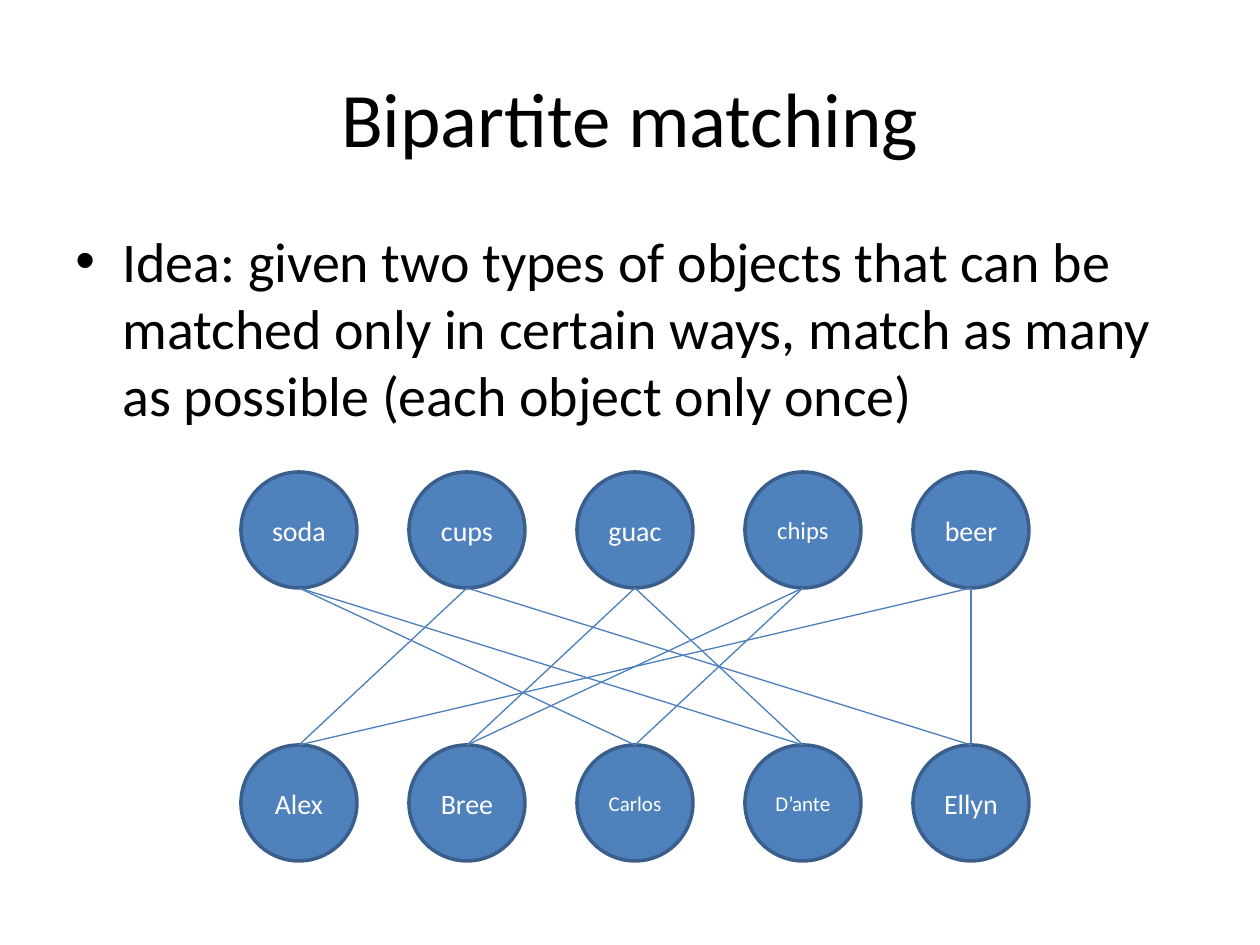
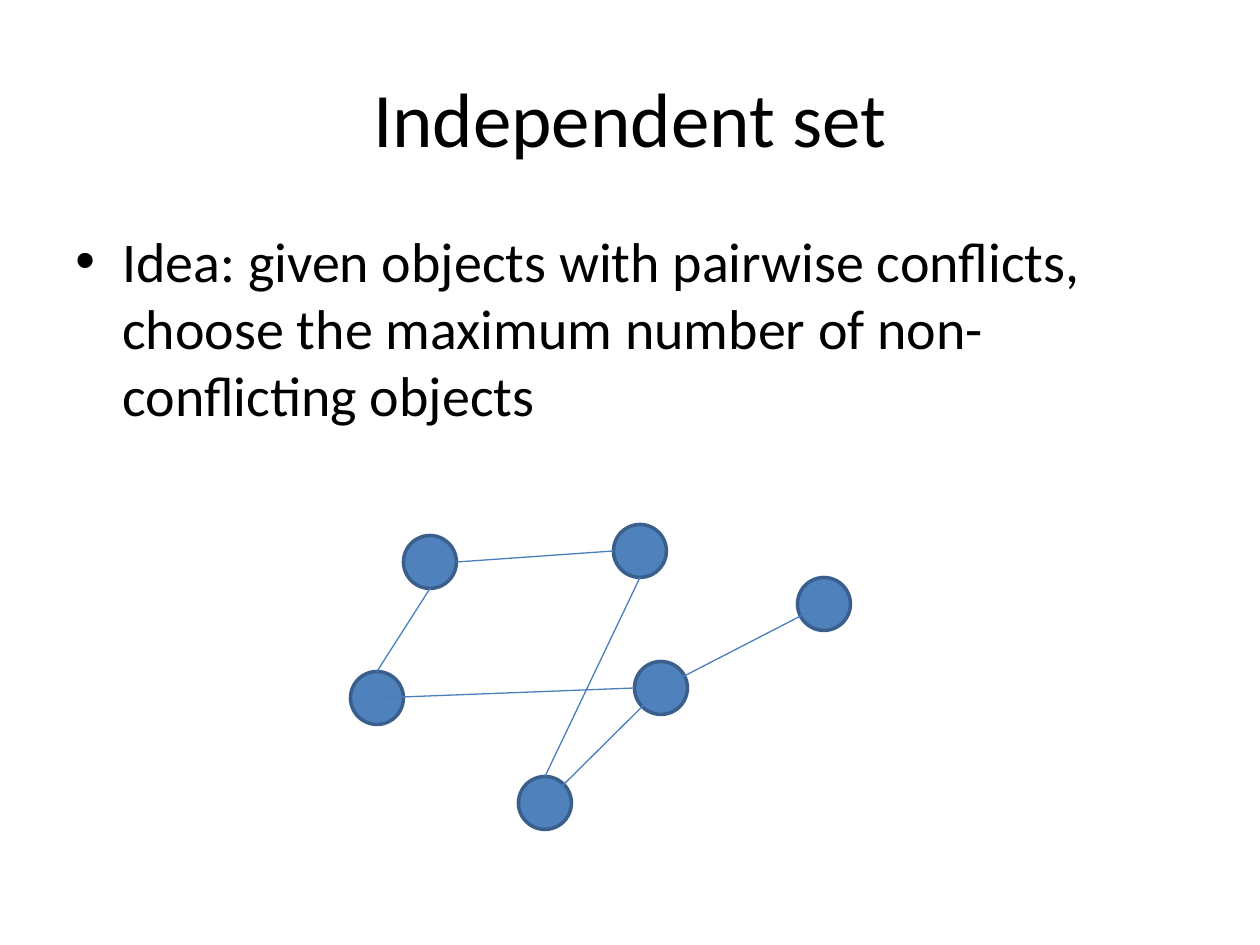
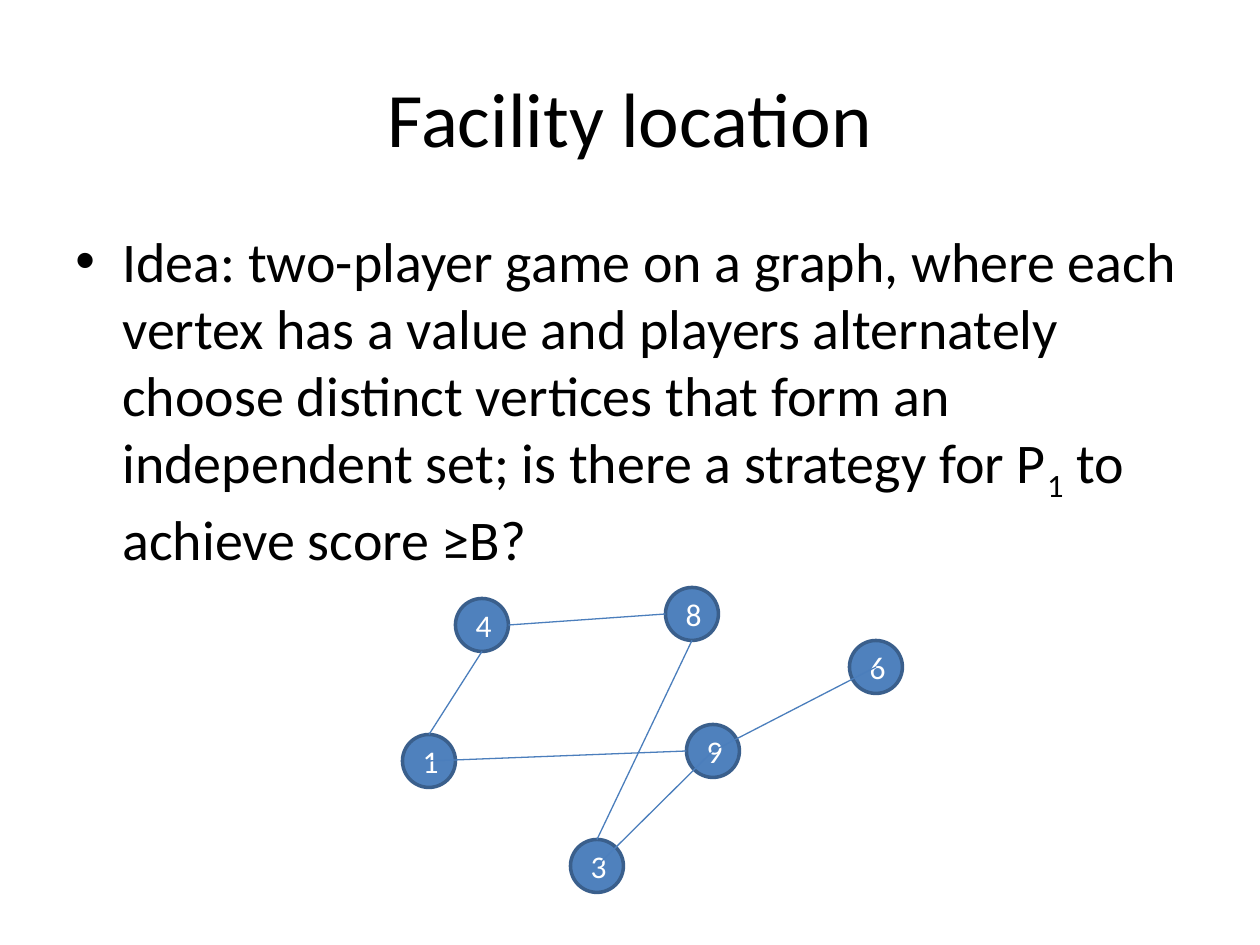
from pptx import Presentation
from pptx.dml.color import RGBColor
from pptx.enum.shapes import MSO_CONNECTOR, MSO_SHAPE
from pptx.enum.text import MSO_ANCHOR, PP_ALIGN
from pptx.oxml.ns import qn
from pptx.util import Pt
from lxml.etree import SubElement

PX = 914400 / 126
FONT = "Calibri"
BLACK, WHITE = "000000", "FFFFFF"
NODE_FILL, NODE_LINE, EDGE = "4F81BD", "3A5F8C", "4B7EBC"
TITLE_BOX = (63, 38, 1134, 158)
BODY_BOX = (63, 220, 1134, 624)
BULLET_INDENT = 47

# Bipartite graph: (label, text size) per row, then which item suits whom
ITEMS = [("soda", 16), ("cups", 16), ("guac", 16), ("chips", 14), ("beer", 16)]
PEOPLE = [("Alex", 16), ("Bree", 16), ("Carlos", 12), ("D’ante", 12), ("Ellyn", 16)]
MATCHES = {
    "soda": ["Carlos", "D’ante"],
    "cups": ["Alex", "Ellyn"],
    "guac": ["Bree", "D’ante"],
    "chips": ["Carlos", "Bree"],
    "beer": ["Ellyn", "Alex"],
}
MATCH_DIAMETER = 116
FIRST_X, COLUMN_PITCH = 299, 168
ITEMS_Y, PEOPLE_Y = 530, 803

# Conflict graph: vertex value -> centre, then edges as (vertex, side) pairs
VERTICES = {
    "4": (430, 562), "1": (377, 698), "3": (545, 803),
    "8": (640, 551), "9": (661, 688), "6": (824, 604),
}
CONFLICTS = [
    (("8", "left"), ("4", "right")),
    (("4", "bottom"), ("1", "top")),
    (("1", "centre"), ("9", "left")),
    (("6", "centre"), ("9", "centre")),
    (("9", "centre"), ("3", "centre")),
    (("8", "bottom"), ("3", "top")),
]
VERTEX_DIAMETER = 53
SIDES = {"centre": (0, 0), "left": (-1, 0), "right": (1, 0),
         "top": (0, -1), "bottom": (0, 1)}

MATCHING_IDEA = [
    "Idea: given two types of objects that can be matched only in certain ways, "
    "match as many as possible (each object only once)"]
INDEPENDENT_IDEA = [
    "Idea: given objects with pairwise conflicts, choose the maximum number of "
    "non-conflicting objects"]
# Every second part is set as a subscript
FACILITY_IDEA = [
    "Idea: two-player game on a graph, where each vertex has a value and players "
    "alternately choose distinct vertices that form an independent set; is there "
    "a strategy for P", "1", " to achieve score ≥B?"]


def px(length):
    return round(length * PX)


def rgb(color):
    return RGBColor.from_string(color)


def write(frame, parts, size, color=BLACK, align=PP_ALIGN.LEFT,
          anchor=MSO_ANCHOR.TOP, bullet=False):
    """Fill a text frame with one paragraph; odd-numbered parts become subscripts."""
    frame.word_wrap = True
    frame.vertical_anchor = anchor
    paragraph = frame.paragraphs[0]
    paragraph.alignment = align
    for index, part in enumerate(parts):
        run = paragraph.add_run()
        run.text = part
        run.font.size = Pt(size)
        run.font.name = FONT
        run.font.color.rgb = rgb(color)
        if index % 2:
            run.font._element.set("baseline", "-25000")
    if bullet:
        paragraph.space_before = Pt(size * 0.2)
        properties = paragraph._p.get_or_add_pPr()
        properties.set("marL", str(px(BULLET_INDENT)))
        properties.set("indent", str(-px(BULLET_INDENT)))
        SubElement(properties, qn("a:buFont")).set("typeface", "Arial")
        SubElement(properties, qn("a:buChar")).set("char", "•")


def add_idea_slide(deck, title, idea):
    slide = deck.slides.add_slide(deck.slide_layouts[5])
    heading = slide.shapes.title
    heading.left, heading.top, heading.width, heading.height = map(px, TITLE_BOX)
    write(heading.text_frame, [title], 44, align=PP_ALIGN.CENTER,
          anchor=MSO_ANCHOR.MIDDLE)
    body = slide.shapes.add_textbox(*map(px, BODY_BOX))
    write(body.text_frame, idea, 32, bullet=True)
    return slide


def add_node(slide, centre, diameter, label="", size=18):
    x, y = centre
    node = slide.shapes.add_shape(
        MSO_SHAPE.OVAL, px(x - diameter / 2), px(y - diameter / 2),
        px(diameter), px(diameter))
    node.shadow.inherit = False
    node.fill.solid()
    node.fill.fore_color.rgb = rgb(NODE_FILL)
    node.line.color.rgb = rgb(NODE_LINE)
    node.line.width = Pt(2)
    if label:
        write(node.text_frame, [label], size, color=WHITE,
              align=PP_ALIGN.CENTER, anchor=MSO_ANCHOR.MIDDLE)


def side_point(centre, diameter, side):
    return tuple(c + step * diameter / 2 for c, step in zip(centre, SIDES[side]))


def add_edge(slide, start, end):
    edge = slide.shapes.add_connector(MSO_CONNECTOR.STRAIGHT, *map(px, start + end))
    edge.line.color.rgb = rgb(EDGE)
    edge.line.width = Pt(0.75)
    SubElement(edge._element.spPr, qn("a:effectLst"))


def draw_matching(slide):
    centres = {}
    for row, y in ((ITEMS, ITEMS_Y), (PEOPLE, PEOPLE_Y)):
        for column, (label, size) in enumerate(row):
            centres[label] = (FIRST_X + column * COLUMN_PITCH, y)
            add_node(slide, centres[label], MATCH_DIAMETER, label, size)
    for item, people in MATCHES.items():
        for person in people:
            add_edge(slide, side_point(centres[item], MATCH_DIAMETER, "bottom"),
                     side_point(centres[person], MATCH_DIAMETER, "top"))


def draw_conflicts(slide, shift=(0, 0), show_values=False):
    centres = {value: (x + shift[0], y + shift[1])
               for value, (x, y) in VERTICES.items()}
    for value, centre in centres.items():
        add_node(slide, centre, VERTEX_DIAMETER, value if show_values else "")
    for ends in CONFLICTS:
        add_edge(slide, *(side_point(centres[value], VERTEX_DIAMETER, side)
                          for value, side in ends))


def main():
    deck = Presentation()
    deck.slide_width, deck.slide_height = px(1260), px(945)
    draw_matching(add_idea_slide(deck, "Bipartite matching", MATCHING_IDEA))
    draw_conflicts(add_idea_slide(deck, "Independent set", INDEPENDENT_IDEA))
    draw_conflicts(add_idea_slide(deck, "Facility location", FACILITY_IDEA),
                   shift=(52, 63), show_values=True)
    deck.save("out.pptx")


if __name__ == "__main__":
    main()
